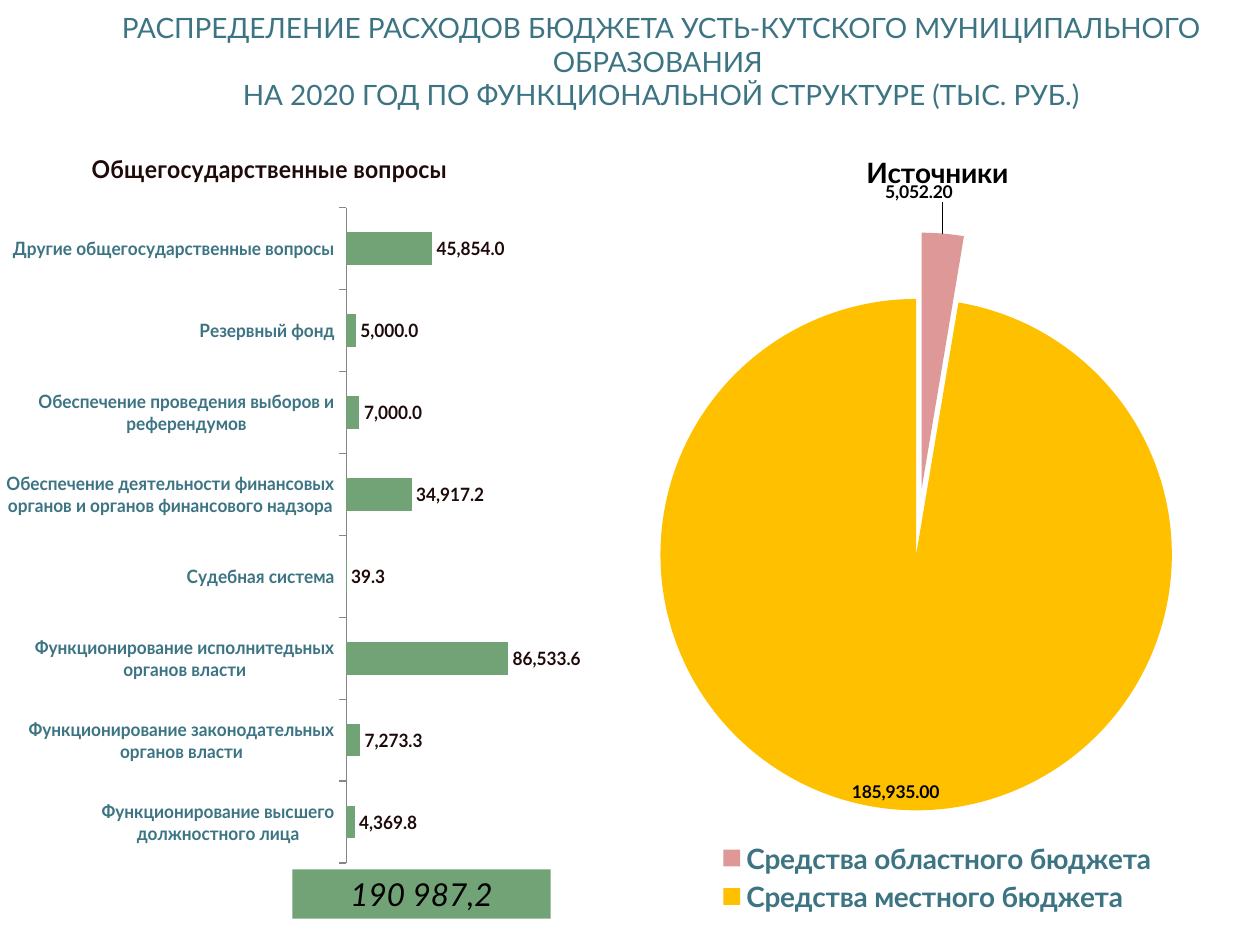
from lxml import etree
from pptx import Presentation
from pptx.chart.data import CategoryChartData
from pptx.dml.color import RGBColor
from pptx.enum.chart import (XL_CHART_TYPE, XL_LABEL_POSITION,
                             XL_LEGEND_POSITION, XL_TICK_LABEL_POSITION, XL_TICK_MARK)
from pptx.enum.shapes import MSO_SHAPE
from pptx.enum.text import MSO_ANCHOR, PP_ALIGN
from pptx.oxml.ns import qn
from pptx.util import Inches, Pt

BAR, PIE = XL_CHART_TYPE.BAR_CLUSTERED, XL_CHART_TYPE.PIE
OUTER, INNER = XL_LABEL_POSITION.OUTSIDE_END, XL_LABEL_POSITION.INSIDE_END
BOTTOM = XL_LEGEND_POSITION.BOTTOM
OUT, NONE, LOW = XL_TICK_MARK.OUTSIDE, XL_TICK_MARK.NONE, XL_TICK_LABEL_POSITION.LOW
RECT, MIDDLE, CENTER = MSO_SHAPE.RECTANGLE, MSO_ANCHOR.MIDDLE, PP_ALIGN.CENTER

TEAL, GREEN, DARK, BLACK = "3C7483", "72A376", "1F0A0A", "000000"
WIDE, HIGH = Inches(10), Inches(7.5)


def style(font, size, color, **marks):
    for key, val in dict(name="Lato", size=Pt(size), **marks).items():
        setattr(font, key, val)
    font.color.rgb = RGBColor.from_string(color)


def place(parent, index, **parts):
    """Insert a manual chart layout at the given child index."""
    lay = etree.Element(qn("c:layout"))
    box = etree.SubElement(lay, qn("c:manualLayout"))
    for tag, val in parts.items():
        etree.SubElement(box, qn("c:" + tag)).set("val", str(val))
    for old in parent.findall(qn("c:layout")):
        parent.remove(old)
    parent.insert(index, lay)


prs = Presentation()
prs.slide_width, prs.slide_height = WIDE, HIGH
slide = prs.slides.add_slide(prs.slide_layouts[6])
shapes = slide.shapes

# Heading and total
head = shapes.add_textbox(int(WIDE * 0.05), Inches(0.13), int(WIDE * 0.95), Inches(0.71))
total = shapes.add_shape(RECT, Inches(2.32), int(HIGH * 0.92), Inches(2.05), Inches(0.39))
total.shadow.inherit = False
total.fill.solid()
total.fill.fore_color.rgb = RGBColor.from_string(GREEN)
total.line.fill.background()
texts = [
    (head, "РАСПРЕДЕЛЕНИЕ РАСХОДОВ БЮДЖЕТА УСТЬ-КУТСКОГО МУНИЦИПАЛЬНОГО ОБРАЗОВАНИЯ \v"
           "НА 2020 ГОД ПО ФУНКЦИОНАЛЬНОЙ СТРУКТУРЕ (ТЫС. РУБ.)", 16, TEAL, False),
    (total, "190 987,2", 18, BLACK, True),
]
for shape, text, size, color, slant in texts:
    frame = shape.text_frame
    frame.word_wrap, frame.vertical_anchor = True, MIDDLE
    para = frame.paragraphs[0]
    para.text, para.alignment = text, CENTER
    for run in para.runs:
        style(run.font, size, color, italic=slant)

# Charts: kind, title, title size and colour, box, number format,
# label size, colour and place, plot layout, rows
specs = [
    (BAR, "Общегосударственные вопросы", 14, DARK, (-0.04, 0.99, 4.65, 5.98),
     "#,##0.0", 10.5, DARK, OUTER, (0.64, 0.11, 0.34, 0.87), [
         ("Функционирование высшего должностного лица", 4369.8),
         ("Функционирование законодательных органов власти", 7273.3),
         ("Функционирование исполнитедьных органов власти", 86533.6),
         ("Судебная система", 39.3),
         ("Обеспечение деятельности финансовых органов и органов финансового надзора",
          34917.2),
         ("Обеспечение проведения выборов и референдумов", 7000),
         ("Резервный фонд", 5000),
         ("Другие общегосударственные вопросы", 45854)]),
    (PIE, "Источники", 16, BLACK, (5, 0.99, 4.88, 6.3),
     "#,##0.00", 10, BLACK, INNER, (0, 0, 0.94, 1), [
         ("Средства областного бюджета", 5052.2),
         ("Средства местного бюджета", 185935)]),
]
charts = []
for kind, name, size, color, box, fmt, small, ink, spot, plan, rows in specs:
    data = CategoryChartData(number_format=fmt)
    data.categories = [row[0] for row in rows]
    data.add_series(name, [row[1] for row in rows])
    chart = shapes.add_chart(kind, *map(Inches, box), data).chart
    style(chart.font, 18, BLACK)
    chart.has_title, chart.has_legend = True, kind == PIE
    title = chart.chart_title
    title.include_in_layout = False
    title.text_frame.text = name
    style(title.text_frame.paragraphs[0].runs[0].font, size, color, bold=True)
    plot = chart.plots[0]
    plot.has_data_labels = True
    labels = plot.series[0].data_labels
    for key, val in dict(show_value=True, number_format=fmt,
                         number_format_is_linked=False, position=spot).items():
        setattr(labels, key, val)
    style(labels.font, small, ink, bold=True)
    x, y, w, h = plan
    area = plot._element.getparent()
    place(area, 0, layoutTarget="inner", xMode="edge", yMode="edge", x=x, y=y, w=w, h=h)
    charts.append(chart)
bars, pie = charts

# Bars
plot = bars.plots[0]
plot.gap_width, plot.vary_by_categories = 150, False
fill = plot.series[0].format.fill
fill.solid()
fill.fore_color.rgb = RGBColor.from_string(GREEN)
axis = bars.category_axis
axis.major_tick_mark, axis.minor_tick_mark = OUT, NONE
axis.tick_label_position = LOW
axis.has_major_gridlines = False
axis.format.line.color.rgb = RGBColor.from_string("868686")
style(axis.tick_labels.font, 10.5, TEAL, bold=True)
scale = bars.value_axis
scale.visible = scale.has_major_gridlines = False
scale.minimum_scale, scale.maximum_scale = 0, 100000

# Pie
plot = pie.plots[0]
plot.vary_by_categories = True
series = plot.series[0]
for i, color in enumerate(["DE9898", "FFC000"]):
    fill = series.points[i].format.fill
    fill.solid()
    fill.fore_color.rgb = RGBColor.from_string(color)
burst = etree.Element(qn("c:explosion"), val="13")
series._element.find(qn("c:dPt")).addprevious(burst)
for dot in series._element.findall(qn("c:dPt")):
    mark = etree.Element(qn("c:explosion"), val="13")
    dot.find(qn("c:spPr")).addprevious(mark)

label = series.points[0].data_label
style(label.font, 10, BLACK, bold=True)
label.position = OUTER
node = series._element.find(qn("c:dLbls")).find(qn("c:dLbl"))
place(node, 1, x=-0.04, y=-0.03)
form = etree.Element(qn("c:numFmt"), formatCode="#,##0.00", sourceLinked="0")
node.find(qn("c:layout")).addnext(form)
lead = series._element.find(qn("c:dLbls")).find(qn("c:showLeaderLines"))
if lead is None:
    lead = etree.SubElement(series._element.find(qn("c:dLbls")), qn("c:showLeaderLines"))
lead.set("val", "1")

legend = pie.legend
legend.position, legend.include_in_layout = BOTTOM, False
style(legend.font, 16, TEAL, bold=True)

prs.save("out.pptx")
